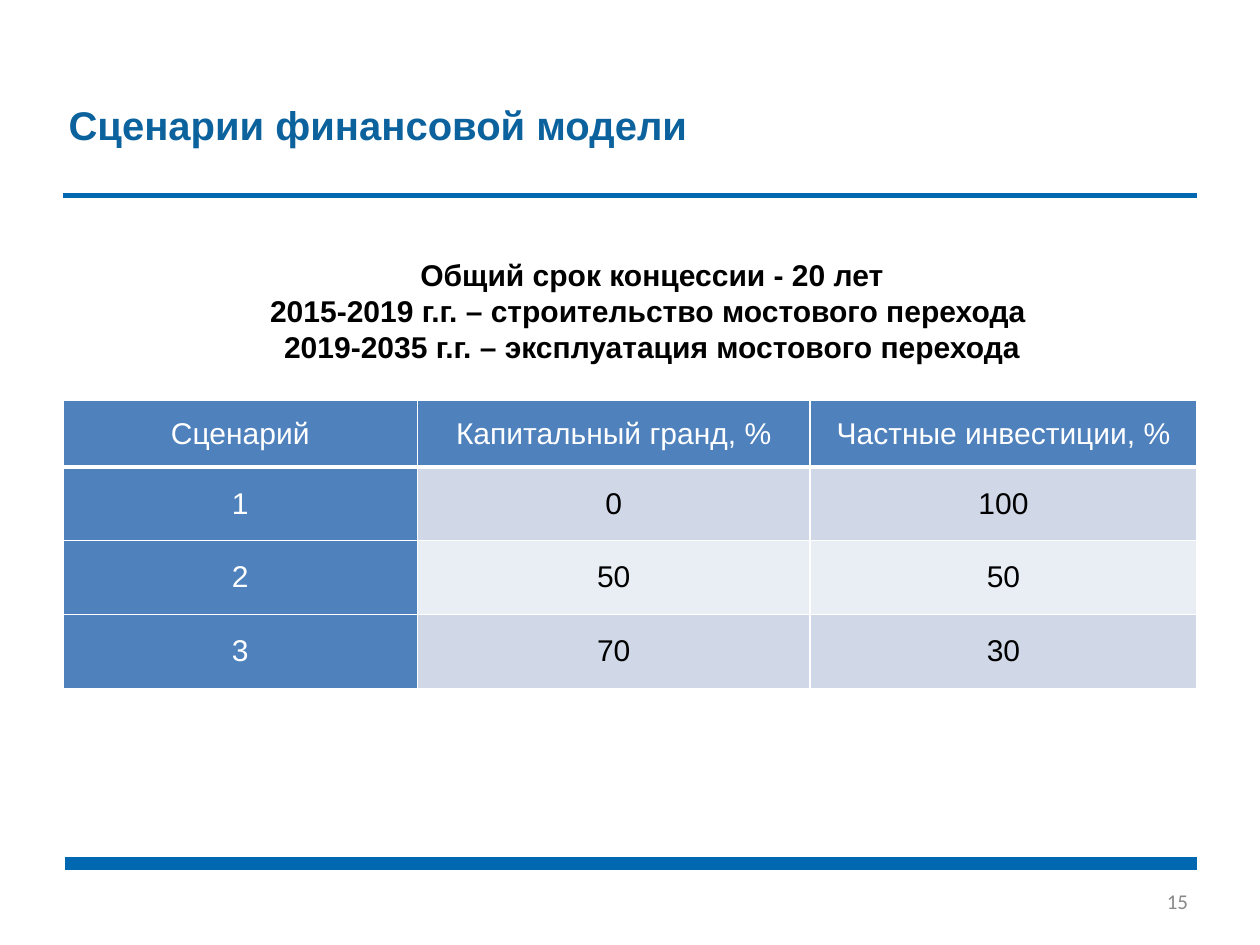
import pptx
import pptx.util
import pptx.dml.color
import pptx.enum.text
import pptx.enum.shapes
import pptx.oxml
import pptx.oxml.ns
import lxml.etree

Cm = pptx.util.Cm
Pt = pptx.util.Pt
align = pptx.enum.text.PP_ALIGN
middle = pptx.enum.text.MSO_ANCHOR.MIDDLE
qn = pptx.oxml.ns.qn

title = "Сценарии финансовой модели"
terms = [
    "Общий срок концессии - 20 лет",
    "2015-2019 г.г. – строительство мостового перехода ",
    "2019-2035 г.г. – эксплуатация мостового перехода",
]
page = "15"
rows = [
    ("Сценарий", "Капитальный гранд, %", "Частные инвестиции, %"),
    ("1", "0", "100"),
    ("2", "50", "50"),
    ("3", "70", "30"),
]
widths = [10, 11.08, 10.92]
heights = [1.88, 2.08, 2.08, 2.08]
rules = [(1.83, 24.38, 10.5), (1.78, 5.51, 4)]
right = 33.78
blue, white, black = "4F81BD", "FFFFFF", "000000"
bands = ["D0D8E8", "E9EDF4"]


def color(code):
    return pptx.dml.color.RGBColor.from_string(code)


def write(para, text, size, code, bold=False, face="Arial"):
    run = para.add_run()
    run.text = text
    run.font.size = Pt(size)
    run.font.name = face
    run.font.bold = bold
    run.font.color.rgb = color(code)


def border(cell, side, width):
    line = lxml.etree.SubElement(cell._tc.get_or_add_tcPr(), qn("a:ln" + side))
    line.set("w", str(Pt(width)))
    fill = lxml.etree.SubElement(line, qn("a:solidFill"))
    lxml.etree.SubElement(fill, qn("a:srgbClr")).set("val", white)


def draw_rule(slide, left, top, width):
    kind = pptx.enum.shapes.MSO_CONNECTOR.STRAIGHT
    line = slide.shapes.add_connector(kind, Cm(left), Cm(top), Cm(right), Cm(top))
    line.line.color.rgb = color("0068B1")
    line.line.width = Pt(width)
    lxml.etree.SubElement(line._element.spPr, qn("a:effectLst"))


def fill_cell(cell, text, row, col):
    head = row == 0 or col == 0
    for side in "LRTB":
        thick = (row, side) in [(0, "B"), (1, "T")]
        border(cell, side, 3 if thick else 1)
    cell.fill.solid()
    cell.fill.fore_color.rgb = color(blue if head else bands[(row - 1) % 2])
    cell.vertical_anchor = middle
    cell.margin_left = cell.margin_right = Cm(0.18)
    cell.margin_top = cell.margin_bottom = 0
    para = cell.text_frame.paragraphs[0]
    para.alignment = align.CENTER
    para.space_before = para.space_after = Pt(6)
    write(para, text, 24, white if head else black)


def draw_table(slide):
    frame = slide.shapes.add_table(
        len(rows), len(widths), Cm(1.78), Cm(11.3), Cm(sum(widths)), Cm(sum(heights)))
    table = frame.table
    for col, width in enumerate(widths):
        table.columns[col].width = Cm(width)
    for row, texts in enumerate(rows):
        table.rows[row].height = Cm(heights[row])
        for col, text in enumerate(texts):
            fill_cell(table.cell(row, col), text, row, col)


def add_text(slide, left, top, width, height):
    box = slide.shapes.add_textbox(Cm(left), Cm(top), Cm(width), Cm(height))
    box.text_frame.word_wrap = True
    return box.text_frame


def main():
    deck = pptx.Presentation()
    deck.slide_width, deck.slide_height = Cm(35.56), Cm(26.67)
    slide = deck.slides.add_slide(deck.slide_layouts[5])

    for rule in rules:
        draw_rule(slide, *rule)

    head = slide.shapes.title
    head.left, head.top, head.width, head.height = Cm(1.68), Cm(1.3), Cm(22.48), Cm(4.44)
    head.text_frame.vertical_anchor = middle
    para = head.text_frame.paragraphs[0]
    para.alignment = align.LEFT
    write(para, title, 32, "0B629D", True)

    foot = add_text(slide, 24.51, 24.71, 9.27, 1.42)
    foot.vertical_anchor = middle
    foot.paragraphs[0].alignment = align.RIGHT
    write(foot.paragraphs[0], page, 16.8, "898989", face="Calibri")

    body = add_text(slide, 3.53, 7.11, 29.74, 16.66)
    for spot, text in enumerate(terms):
        para = body.add_paragraph() if spot else body.paragraphs[0]
        para.alignment = align.CENTER
        write(para, text, 24, black, True)

    draw_table(slide)
    deck.save("out.pptx")


if __name__ == "__main__":
    main()
